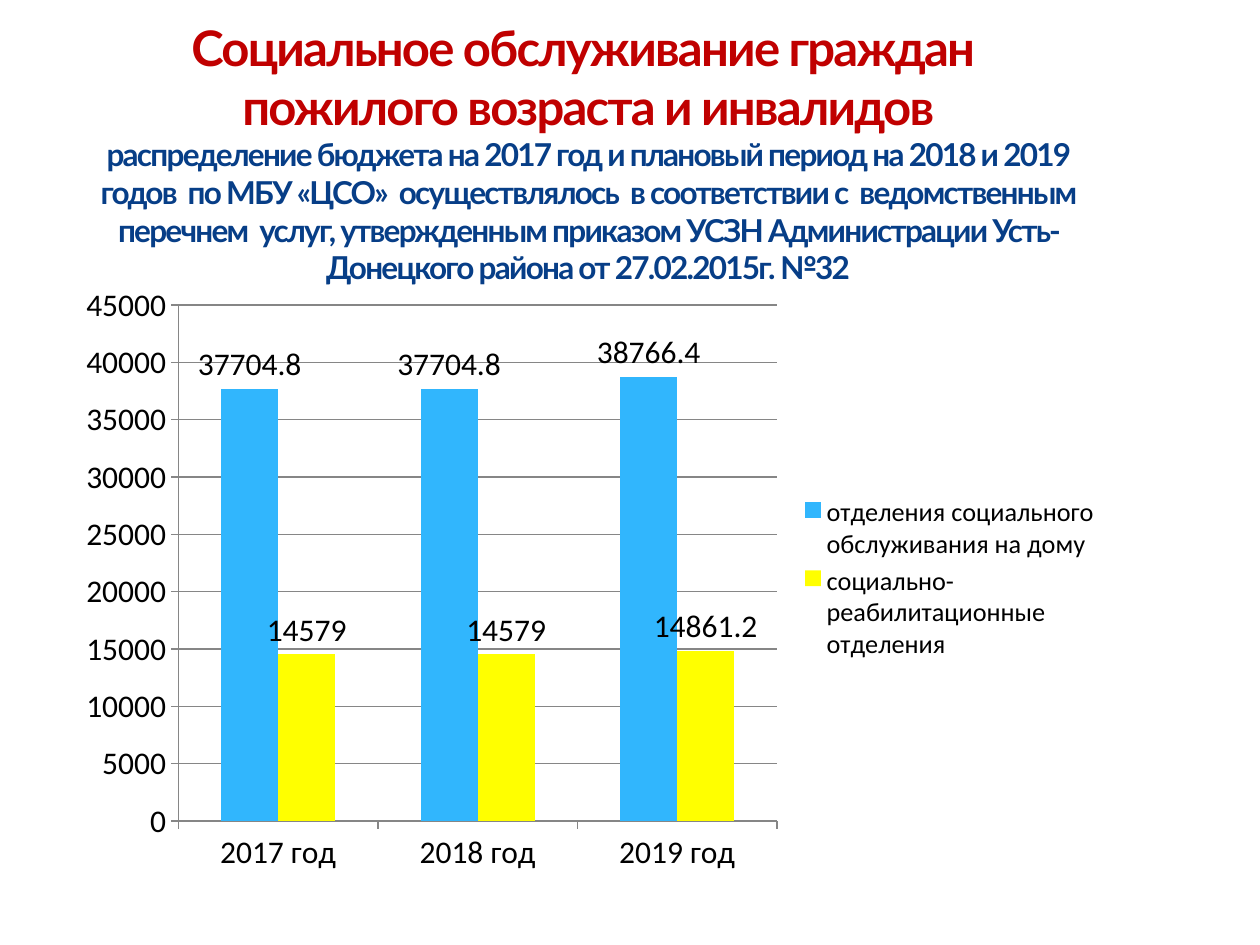
from pptx import Presentation
from pptx.chart.data import CategoryChartData as ChartData
from pptx.dml.color import RGBColor as RGB
from pptx.enum.chart import XL_CHART_TYPE as Kind
from pptx.enum.chart import XL_LABEL_POSITION as LabelPos
from pptx.enum.chart import XL_LEGEND_POSITION as LegendPos
from pptx.enum.chart import XL_TICK_MARK as Tick
from pptx.enum.text import MSO_ANCHOR as Anchor
from pptx.enum.text import PP_ALIGN as Align
from pptx.oxml import parse_xml
from pptx.oxml.ns import nsdecls
from pptx.util import Pt

RED = RGB(0xC0, 0x00, 0x00)
NAVY = RGB(0x07, 0x3E, 0x87)
BLUE = RGB(0x31, 0xB6, 0xFD)
YELLOW = RGB(0xFF, 0xFF, 0x00)
GREY = RGB(0x86, 0x86, 0x86)
BLACK = RGB(0, 0, 0)

HEAD = ["Социальное обслуживание граждан ", "пожилого возраста и инвалидов"]
NOTE = (
    "распределение бюджета на 2017 год и плановый период на 2018 и 2019 "
    "годов  по МБУ «ЦСО»  осуществлялось  в соответствии с  ведомственным "
    "перечнем  услуг, утвержденным приказом УСЗН Администрации "
    "Усть-Донецкого района от 27.02.2015г. №32"
)
YEARS = ["2017 год", "2018 год", "2019 год"]
SERIES = [
    ("отделения социального обслуживания на дому", (37704.8, 37704.8, 38766.4), BLUE),
    ("социально-реабилитационные отделения", (14579, 14579, 14861.2), YELLOW),
]


class Deck:
    title_font = "Lato"
    chart_font = "Calibri"

    def __init__(self, wide, high):
        self.prs = Presentation()
        self.prs.slide_width, self.prs.slide_height = Pt(wide), Pt(high)
        self.slide = self.prs.slides.add_slide(self.prs.slide_layouts[6])

    def title(self, box, lines):
        """Put (text, size, color) lines in one centred paragraph."""
        frame = self.slide.shapes.add_textbox(*map(Pt, box)).text_frame
        frame.word_wrap = True
        frame.vertical_anchor = Anchor.MIDDLE
        para = frame.paragraphs[0]
        para.alignment = Align.CENTER
        for i, (text, size, color) in enumerate(lines):
            if i:
                para.add_line_break()
            run = para.add_run()
            run.text = text
            font = run.font
            font.name, font.size, font.bold = self.title_font, Pt(size), True
            font.color.rgb = color
            run._r.get_or_add_rPr().set("spc", "-100")

    def columns(self, box, cats, series, top, step):
        data = ChartData()
        data.categories = cats
        for name, vals, _ in series:
            data.add_series(name, vals)
        chart = self.slide.shapes.add_chart(
            Kind.COLUMN_CLUSTERED, *map(Pt, box), data
        ).chart
        chart.has_title = False
        chart.font.name, chart.font.size = self.chart_font, Pt(18)
        chart.font.color.rgb = BLACK

        plot = chart.plots[0]
        plot.gap_width, plot.overlap = 150, 0
        plot.vary_by_categories = False
        for item, (_, _, color) in zip(plot.series, series):
            item.format.fill.solid()
            item.format.fill.fore_color.rgb = color
            labels = item.data_labels
            labels.show_value = True
            labels.position = LabelPos.OUTSIDE_END

        axis = chart.value_axis
        axis.minimum_scale, axis.maximum_scale, axis.major_unit = 0, top, step
        axis.has_major_gridlines = True
        for part in (axis, chart.category_axis, axis.major_gridlines):
            part.format.line.color.rgb = GREY
            part.format.line.width = Pt(0.75)
        for part in (axis, chart.category_axis):
            part.major_tick_mark = Tick.OUTSIDE

        chart.has_legend = True
        chart.legend.position = LegendPos.RIGHT
        chart.legend.include_in_layout = False
        chart.legend.font.size = Pt(15)
        self.place(chart, 0.11, 0.05, 0.57, 0.85)

    def place(self, chart, x, y, w, h):
        """Fix the inner plot area as fractions of the chart."""
        area = chart._chartSpace.chart.plotArea
        for old in area.findall("{*}layout"):
            area.remove(old)
        spots = "".join(
            f'<c:{key} val="{val}"/>' for key, val in zip("xywh", (x, y, w, h))
        )
        modes = '<c:xMode val="edge"/><c:yMode val="edge"/>'
        area.insert(0, parse_xml(
            f'<c:layout {nsdecls("c")}><c:manualLayout>'
            f'<c:layoutTarget val="inner"/>{modes}{spots}'
            "</c:manualLayout></c:layout>"
        ))


def main():
    deck = Deck(720, 540)
    lines = [(text, 28, RED) for text in HEAD] + [(NOTE, 18, NAVY)]
    deck.title((36, 21.6, 600, 130.3), lines)
    deck.columns((36, 157, 600, 347), YEARS, SERIES, 45000, 5000)
    deck.prs.save("out.pptx")


if __name__ == "__main__":
    main()
